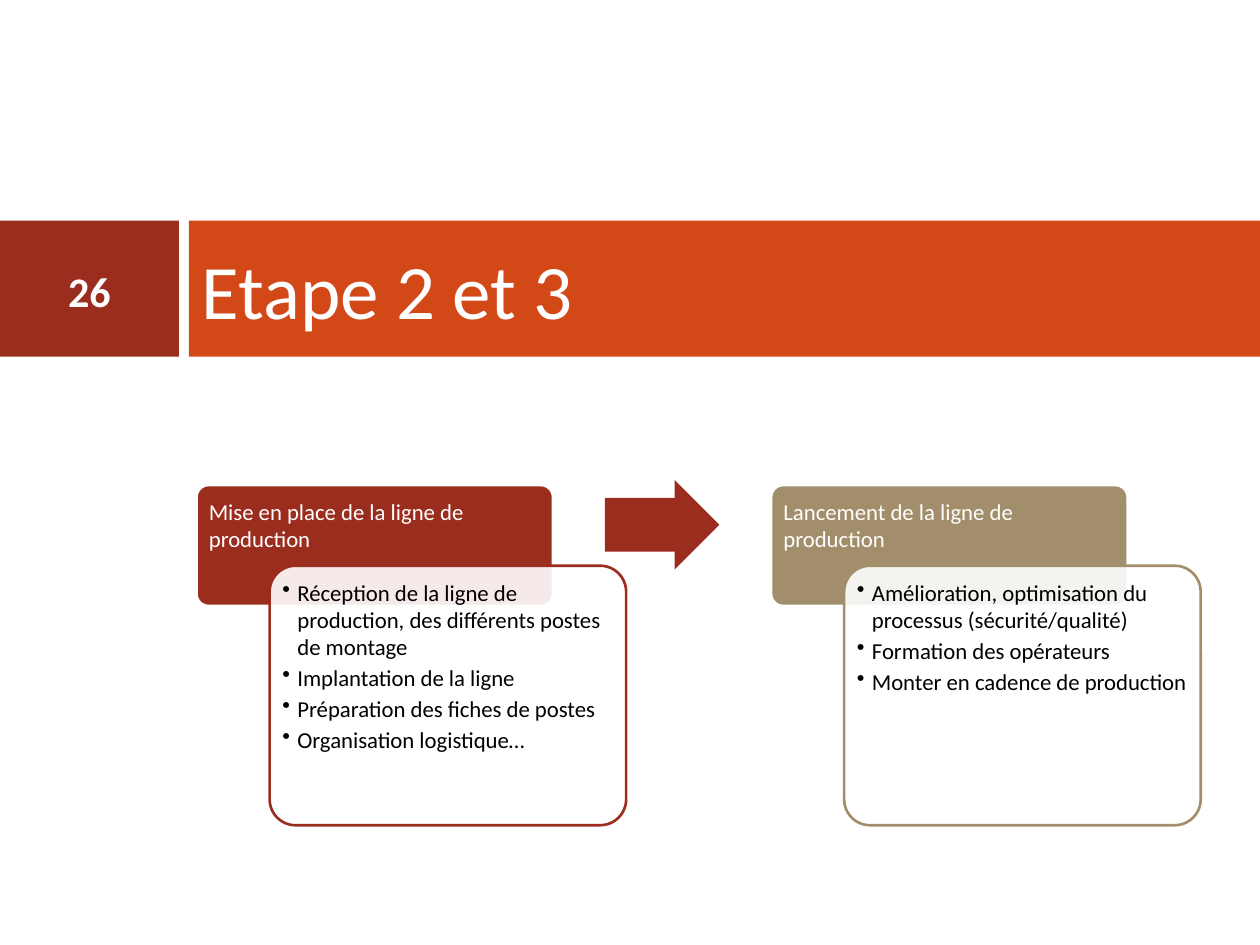
from dataclasses import dataclass

import pptx
import pptx.dml.color
import pptx.enum.shapes
import pptx.enum.text
import pptx.oxml.ns
import pptx.util
from lxml import etree
from pptx.util import Inches, Pt

FONT = "Calibri"
RUST, ORANGE, SAND = "9B2D1F", "D34817", "A28E6A"
WHITE, BLACK = "FFFFFF", "000000"
SHAPE = pptx.enum.shapes.MSO_SHAPE
ANCHOR = pptx.enum.text.MSO_ANCHOR
ALIGN = pptx.enum.text.PP_ALIGN


@dataclass
class Step:
    heading: str
    tasks: list[str]
    color: str


STEPS = [
    Step("Mise en place de la ligne de production",
         ["Réception de la ligne de production, des différents postes de montage",
          "Implantation de la ligne",
          "Préparation des fiches de postes",
          "Organisation logistique…"], RUST),
    Step("Lancement de la ligne de production",
         ["Amélioration, optimisation du processus (sécurité/qualité)",
          "Formation des opérateurs",
          "Monter en cadence de production"], SAND),
]
STEP_LEFT, STEP_PITCH, STEP_WIDTH = 1.56, 4.56, 2.83
HEADER_TOP, HEADER_HEIGHT = 3.85, 0.96
BODY_SHIFT, BODY_TOP, BODY_HEIGHT = 0.58, 4.49, 2.06
BAND_TOP, BAND_HEIGHT = 1.75, 1.08


def paint(target, color: str) -> None:
    """Give a fill a solid colour."""
    target.solid()
    target.fore_color.rgb = pptx.dml.color.RGBColor.from_string(color)


def add_block(page, kind, left: float, top: float, width: float, height: float,
              color: str, outline: str | None = None):
    box = page.shapes.add_shape(kind, Inches(left), Inches(top), Inches(width), Inches(height))
    box.shadow.inherit = False
    paint(box.fill, color)
    if outline:
        paint(box.line.fill, outline)
        box.line.width = Pt(1.5)
    else:
        box.line.fill.background()
    return box


def set_text(frame, text: str, size: float, color: str, anchor, align=ALIGN.LEFT,
             bold: bool = False) -> None:
    frame.text = text
    frame.word_wrap = True
    frame.auto_size = pptx.enum.text.MSO_AUTO_SIZE.NONE
    frame.vertical_anchor = anchor
    for para in frame.paragraphs:
        para.alignment = align
        for span in para.runs:
            span.font.name = FONT
            span.font.size = Pt(size)
            span.font.bold = bold
            paint(span.font.fill, color)


def set_insets(frame, inset: float) -> None:
    frame.margin_left = frame.margin_right = Inches(inset)
    frame.margin_top = frame.margin_bottom = Inches(inset)


def add_bullet(para) -> None:
    para.level = 1
    para.space_after = Pt(2)
    properties = para._p.get_or_add_pPr()
    properties.set("marL", str(Inches(0.12)))
    properties.set("indent", str(-Inches(0.12)))
    bullet = etree.SubElement(properties, pptx.oxml.ns.qn("a:buChar"))
    bullet.set("char", "•")


def add_step(page, step: Step, left: float) -> None:
    # Rounded corners already push the text inwards, so insets stay below 0.1
    header = add_block(page, SHAPE.ROUNDED_RECTANGLE, left, HEADER_TOP,
                       STEP_WIDTH, HEADER_HEIGHT, step.color, WHITE)
    header.adjustments[0] = 0.1
    set_text(header.text_frame, step.heading, 13, WHITE, ANCHOR.TOP)
    set_insets(header.text_frame, 0.07)

    body = add_block(page, SHAPE.ROUNDED_RECTANGLE, left + BODY_SHIFT, BODY_TOP,
                     STEP_WIDTH, BODY_HEIGHT, WHITE, step.color)
    body.adjustments[0] = 0.1
    fill_color = body._element.spPr.find(".//" + pptx.oxml.ns.qn("a:srgbClr"))
    etree.SubElement(fill_color, pptx.oxml.ns.qn("a:alpha")).set("val", "90000")
    set_text(body.text_frame, "\n".join(step.tasks), 13, BLACK, ANCHOR.TOP)
    set_insets(body.text_frame, 0.04)
    for para in body.text_frame.paragraphs:
        add_bullet(para)


def main() -> None:
    deck = pptx.Presentation()
    deck.slide_width, deck.slide_height = Inches(10), Inches(7.5)
    page = deck.slides.add_slide(deck.slide_layouts[5])

    # Title band and page number
    add_block(page, SHAPE.RECTANGLE, 0, BAND_TOP, 1.42, BAND_HEIGHT, RUST)
    add_block(page, SHAPE.RECTANGLE, 1.5, BAND_TOP, 8.5, BAND_HEIGHT, ORANGE)
    title = page.shapes.title
    title.left, title.top = Inches(1.5), Inches(BAND_TOP)
    title.width, title.height = Inches(8.33), Inches(BAND_HEIGHT)
    set_text(title.text_frame, "Etape 2 et 3", 44, WHITE, ANCHOR.MIDDLE)
    page.shapes._spTree.append(title._element)  # bring in front of the band
    number = page.shapes.add_textbox(0, Inches(1.92), Inches(1.42), Inches(0.77))
    set_text(number.text_frame, "26", 24, WHITE, ANCHOR.MIDDLE, ALIGN.CENTER, bold=True)

    # Steps and the arrow between them
    for index, step in enumerate(STEPS):
        add_step(page, step, STEP_LEFT + index * STEP_PITCH)
    arrow = add_block(page, SHAPE.RIGHT_ARROW, 4.8, 3.81, 0.91, 0.71, RUST)
    arrow.adjustments[0], arrow.adjustments[1] = 0.6, 0.5

    deck.save("out.pptx")


if __name__ == "__main__":
    main()
